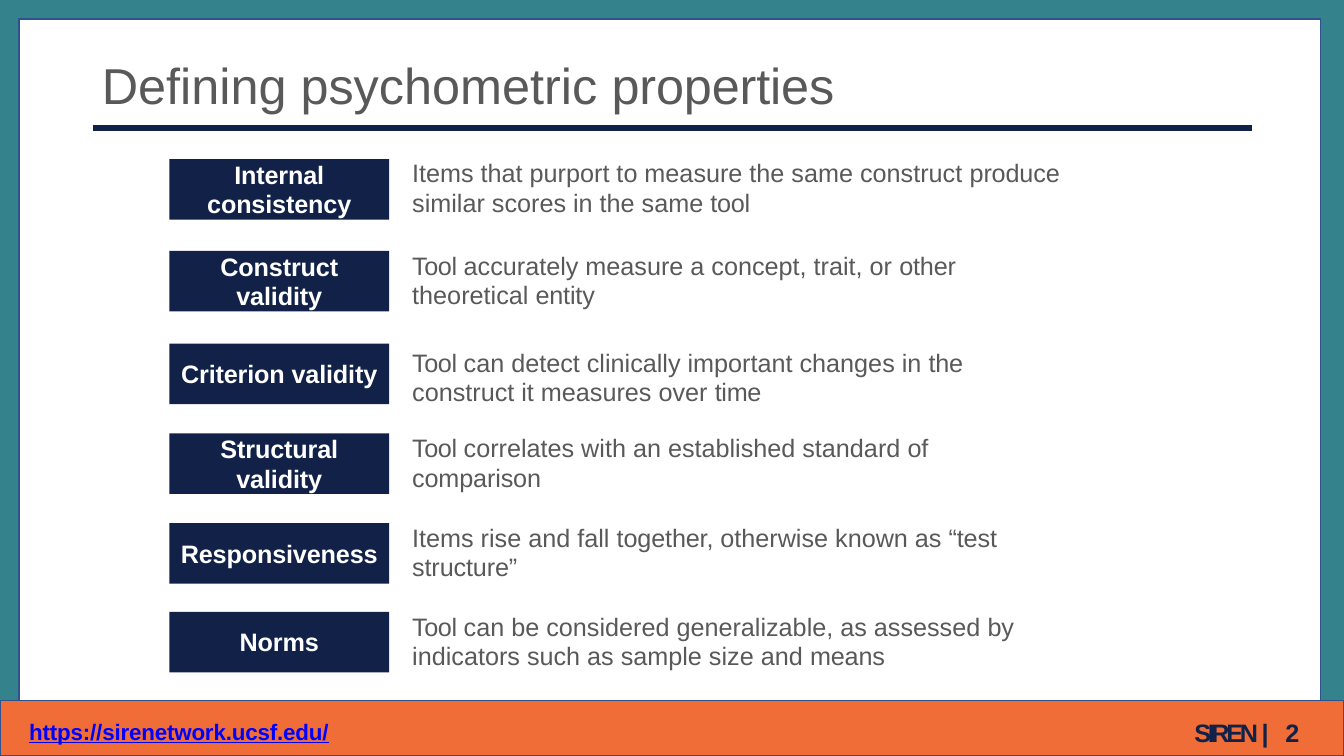
from dataclasses import dataclass

from pptx import Presentation
from pptx import util as u
from pptx.dml.color import RGBColor
from pptx.enum import shapes, text

# The slide is a grid of 80 columns by 45 rows of square cells
COLUMNS, ROWS = 80, 45
CELL = u.Inches(7.5) // ROWS


@dataclass(frozen=True)
class Theme:
    font: str = "Arial"
    teal: str = "34828C"
    orange: str = "F06D37"
    navy: str = "112148"
    outline: str = "2F528F"
    white: str = "FFFFFF"
    gray: str = "595959"
    link: str = "0000FF"
    title_size: float = 36
    body_size: float = 18
    link_size: float = 16
    leading: float = 21
    link_leading: float = 16.5


THEME = Theme()


@dataclass(frozen=True)
class Box:
    left: float
    top: float
    width: float
    height: float

    def inner(self, left, top, width, height):
        return Box(self.left + left, self.top + top, width, height)

    def emu(self):
        return [round(n * CELL) for n in (self.left, self.top, self.width, self.height)]


# Term, row of its label, description row and width, description runs (text, spacing)
DEFINITIONS = [
    ("Internal consistency", 0, -0.24, 38.76, [
        ("Items that purport to measure the same construct ", 0), ("produce ", -0.1),
        ("similar scores in the same ", 0), ("tool", -0.2)]),
    ("Construct validity", 5.46, 5.28, 32.7, [
        ("Tool ", -0.3), ("accurately measure a concept, trait, or ", 0),
        ("other ", -0.1), ("theoretical ", 0), ("entity", -0.1)]),
    ("Criterion validity", 10.98, 11.04, 33.06, [
        ("Tool ", -0.3), ("can detect clinically important changes in ", 0),
        ("the ", -0.2), ("construct it measures over ", 0), ("time", -0.2)]),
    ("Structural validity", 16.32, 16.14, 31.02, [
        ("Tool ", -0.3), ("correlates with an established standard ", 0),
        ("of ", -0.2), ("comparison", -0.1)]),
    ("Responsiveness", 21.66, 21.48, 35.1, [
        ("Items rise and fall ", 0), ("together, ", -0.1),
        ("otherwise known as ", 0), ("“test structure”", -0.1)]),
    ("Norms", 26.94, 26.76, 36.06, [
        ("Tool ", -0.3), ("can be considered generalizable, as assessed ", 0),
        ("by ", -0.2), ("indicators such as sample size and ", 0), ("means", -0.1)]),
]


def color(value):
    return RGBColor.from_string(value)


def add_rectangle(slide, box, fill, line=None):
    shape = slide.shapes.add_shape(shapes.MSO_SHAPE.RECTANGLE, *box.emu())
    shape.shadow.inherit = False
    shape.fill.solid()
    shape.fill.fore_color.rgb = color(fill)
    if line:
        shape.line.color.rgb = color(line)
        shape.line.width = u.Pt(1)
    else:
        shape.line.fill.background()
    return shape


def write(shape, runs, size, ink, bold=False, underline=None, leading=None,
          top_inset=0, side_inset=0.06):
    """Fill a shape with one paragraph made of (text, letter spacing) runs."""
    frame = shape.text_frame
    frame.word_wrap = True
    frame.vertical_anchor = text.MSO_ANCHOR.TOP
    frame.margin_left = round(side_inset * CELL)
    frame.margin_right = round(side_inset * CELL)
    frame.margin_top = round(top_inset * CELL)
    frame.margin_bottom = 0
    paragraph = frame.paragraphs[0]
    paragraph.alignment = text.PP_ALIGN.LEFT
    if leading:
        paragraph.line_spacing = u.Pt(leading)
    for words, spacing in runs:
        run = paragraph.add_run()
        run.text = words
        font = run.font
        font.name, font.size = THEME.font, u.Pt(size)
        font.bold, font.underline = bold, underline
        font.color.rgb = color(ink)
        run._r.get_or_add_rPr().set("spc", str(round(spacing * 100)))
    return frame


def add_text(slide, box, runs, size, ink, **options):
    write(slide.shapes.add_textbox(*box.emu()), runs, size, ink, **options)


def add_backdrop(slide, box, footer_height):
    """Teal border around a white page that stands on the footer."""
    border = 1.14
    body_height = box.height - footer_height
    add_rectangle(slide, box.inner(0, 0, box.width, body_height), THEME.teal)
    add_rectangle(slide, box.inner(border, border, box.width - 2.54, body_height - border),
                  THEME.white, THEME.outline)


def add_footer(slide, box):
    add_rectangle(slide, box, THEME.orange, THEME.outline)
    add_text(slide, box.inner(1.68, 1.26, 18.36, 1.5),
             [("https://sirenetwork.ucsf.edu/", -0.1)], THEME.link_size, THEME.link,
             bold=True, underline=True, leading=THEME.link_leading)
    add_text(slide, box.inner(71.04, 1.02, 6.72, 1.98),
             [("SIREN ", -2.4), ("| ", 3.5), ("2", -0.5)],
             THEME.body_size, THEME.navy, bold=True)


def add_heading(slide, box):
    """Title with a thick rule along the bottom of the box."""
    add_text(slide, box.inner(0.48, 0, 63.42, 5.46),
             [("Defining psychometric ", 0), ("properties", -0.1)],
             THEME.title_size, THEME.gray, top_inset=1.7)
    left, top, width, height = box.emu()
    rule = slide.shapes.add_connector(shapes.MSO_CONNECTOR.STRAIGHT, left, top + height,
                                      left + width, top + height)
    rule.line.color.rgb = color(THEME.navy)
    rule.line.width = u.Pt(4.5)
    properties = rule._element.spPr
    properties.append(properties.makeelement(
        "{http://schemas.openxmlformats.org/drawingml/2006/main}effectLst", {}))


def add_definitions(slide, box):
    """Navy term labels on the left, their meanings on the right."""
    for term, label_row, meaning_row, meaning_width, meaning in DEFINITIONS:
        label = add_rectangle(slide, box.inner(0, label_row, 13.08, 3.6), THEME.navy)
        frame = write(label, [(term, -0.1)], THEME.body_size, THEME.white, bold=True,
                      leading=THEME.leading, side_inset=0.48)
        frame.vertical_anchor = text.MSO_ANCHOR.MIDDLE
        frame.paragraphs[0].alignment = text.PP_ALIGN.CENTER
        add_text(slide, box.inner(14.4, meaning_row, meaning_width, 3.72), meaning,
                 THEME.body_size, THEME.gray, leading=THEME.leading, top_inset=0.18)


def main():
    presentation = Presentation()
    presentation.slide_width = COLUMNS * CELL
    presentation.slide_height = ROWS * CELL
    slide = presentation.slides.add_slide(presentation.slide_layouts[6])
    footer_height = 3.3
    add_backdrop(slide, Box(0, 0, COLUMNS, ROWS), footer_height)
    add_footer(slide, Box(0, ROWS - footer_height, COLUMNS, footer_height))
    add_heading(slide, Box(5.52, 1.5, 69, 6.12))
    add_definitions(slide, Box(10.08, 9.48, 53.16, 30.54))
    presentation.save("out.pptx")


if __name__ == "__main__":
    main()
